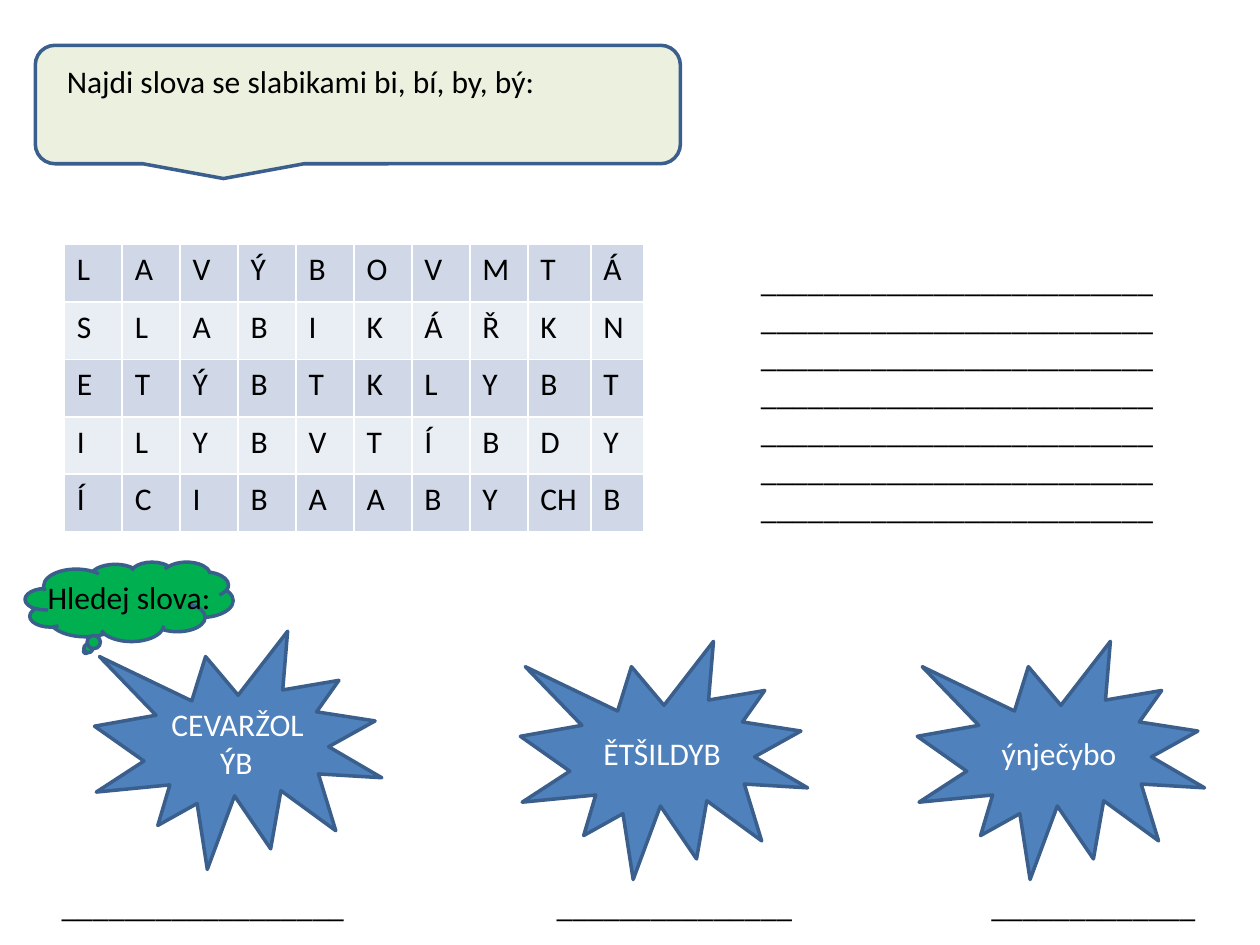
from pptx import Presentation
from pptx.dml.color import RGBColor
from pptx.enum import shapes, text
from pptx.util import Inches, Pt

BLACK = RGBColor(0x00, 0x00, 0x00)
WHITE = RGBColor(0xFF, 0xFF, 0xFF)
BLUE = RGBColor(0x4F, 0x81, 0xBD)
NAVY = RGBColor(0x3A, 0x5F, 0x8C)
GREEN = RGBColor(0x00, 0xB0, 0x50)
CREAM = RGBColor(0xEB, 0xF1, 0xDE)
BANDS = RGBColor(0xD0, 0xD8, 0xE8), RGBColor(0xE9, 0xED, 0xF4)

KIND = shapes.MSO_SHAPE
GRID = (
    "L A V Ý B O V M T Á",
    "S L A B I K Á Ř K N",
    "E T Ý B T K L Y B T",
    "I L Y B V T Í B D Y",
    "Í C I B A A B Y CH B",
)
WIDTHS = [0.46] * 8 + [0.5, 0.42]
# Scrambled words: text, left, top
BURSTS = (
    ("CEVARŽOLÝB", 0.75, 5.01),
    ("ĚTŠILDYB", 4.13, 5.09),
    ("ýnječybo", 7.28, 5.09),
)
# Answer blanks: left, width, underscores
BLANKS = ((0.39, 2.5, 18), (4.32, 2.1, 15), (7.77, 1.9, 13))


def write(frame, words, color=BLACK, align=text.PP_ALIGN.LEFT):
    frame.text = words
    for para in frame.paragraphs:
        para.alignment = align
        for run in para.runs:
            run.font.name = "Calibri"
            run.font.size = Pt(18)
            run.font.color.rgb = color


def add_label(slide, words, x, y, w, h=0.4):
    box = slide.shapes.add_textbox(Inches(x), Inches(y), Inches(w), Inches(h))
    box.text_frame.word_wrap = True
    write(box.text_frame, words)


def add_figure(slide, kind, fill, x, y, w, h):
    shape = slide.shapes.add_shape(
        kind, Inches(x), Inches(y), Inches(w), Inches(h))
    shape.shadow.inherit = False
    shape.fill.solid()
    shape.fill.fore_color.rgb = fill
    shape.line.color.rgb = NAVY
    shape.line.width = Pt(2)
    return shape


def add_burst(slide, words, x, y):
    burst = add_figure(slide, KIND.EXPLOSION1, BLUE, x, y, 2.28, 1.89)
    frame = burst.text_frame
    frame.word_wrap = True
    frame.vertical_anchor = text.MSO_ANCHOR.MIDDLE
    write(frame, words, WHITE, text.PP_ALIGN.CENTER)


def add_grid(slide, x, y):
    height = 0.456
    table = slide.shapes.add_table(
        len(GRID), len(WIDTHS), Inches(x), Inches(y),
        Inches(sum(WIDTHS)), Inches(height * len(GRID))).table
    table.first_row = False
    for col, width in zip(table.columns, WIDTHS):
        col.width = Inches(width)
    for i, line in enumerate(GRID):
        table.rows[i].height = Inches(height)
        for j, letter in enumerate(line.split()):
            cell = table.cell(i, j)
            cell.fill.solid()
            cell.fill.fore_color.rgb = BANDS[i % 2]
            write(cell.text_frame, letter)


def set_title(slide, words, x, y, w, h):
    title = slide.shapes.title
    title.left, title.top = Inches(x), Inches(y)
    title.width, title.height = Inches(w), Inches(h)
    title.text_frame.vertical_anchor = text.MSO_ANCHOR.TOP
    write(title.text_frame, words)
    return title


def main():
    deck = Presentation()
    deck.slide_width, deck.slide_height = Inches(10), Inches(7.5)
    slide = deck.slides.add_slide(deck.slide_layouts[5])

    # Callouts, placed behind the title
    title = set_title(slide, "Najdi slova se slabikami bi, bí, by, bý:",
                      0.43, 0.44, 5.91, 0.4)
    cloud = add_figure(slide, KIND.CLOUD_CALLOUT, GREEN,
                       0.2, 4.46, 1.65, 0.63)
    bubble = add_figure(slide, KIND.ROUNDED_RECTANGULAR_CALLOUT, CREAM,
                        0.28, 0.36, 5.12, 0.94)
    for shape in (cloud, bubble):
        title.element.addprevious(shape.element)

    # Letter grid and seven wrapped answer lines
    add_grid(slide, 0.51, 1.94)
    add_label(slide, "_" * (7 * 25), 5.94, 2.02, 3.39, 2.22)

    # Scrambled words with blanks below
    for burst in BURSTS:
        add_burst(slide, *burst)
    add_label(slide, "Hledej slova:", 0.28, 4.54, 1.5)
    for x, width, count in BLANKS:
        add_label(slide, "_" * count, x, 6.98, width)

    deck.save("out.pptx")


if __name__ == "__main__":
    main()
